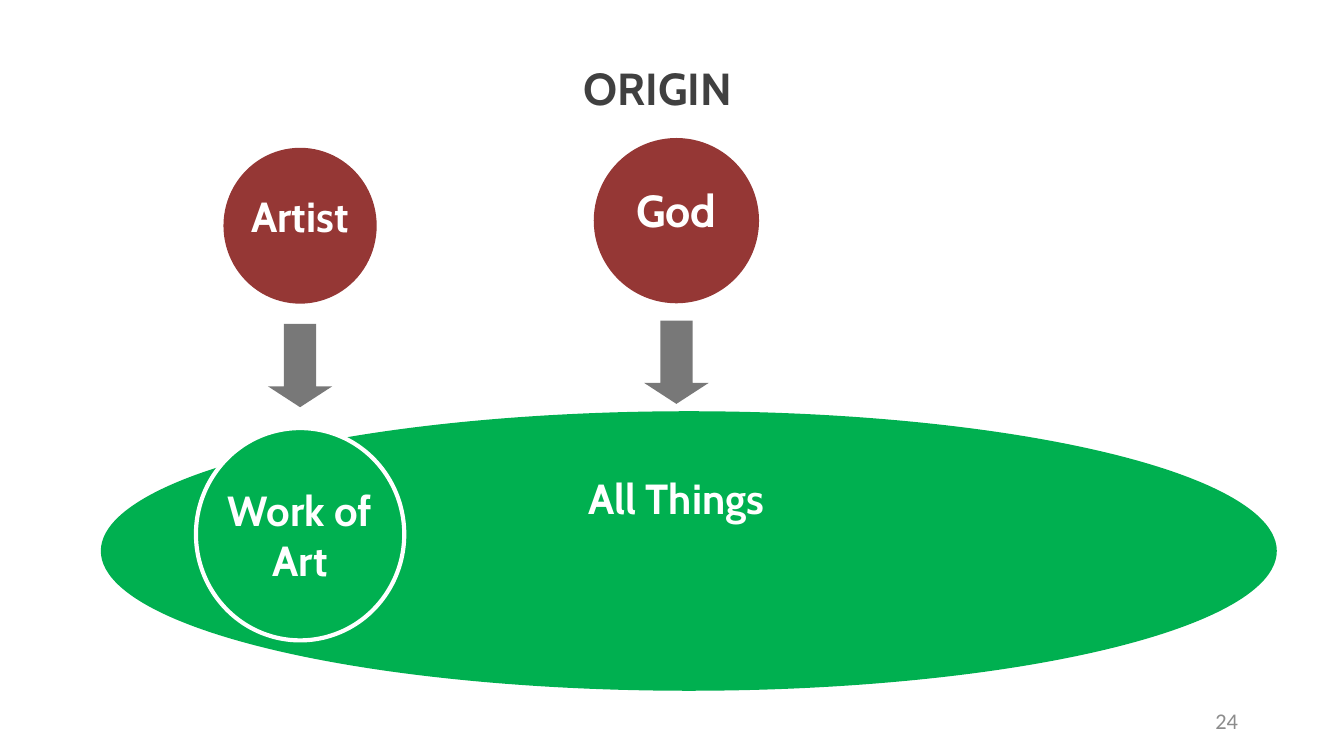
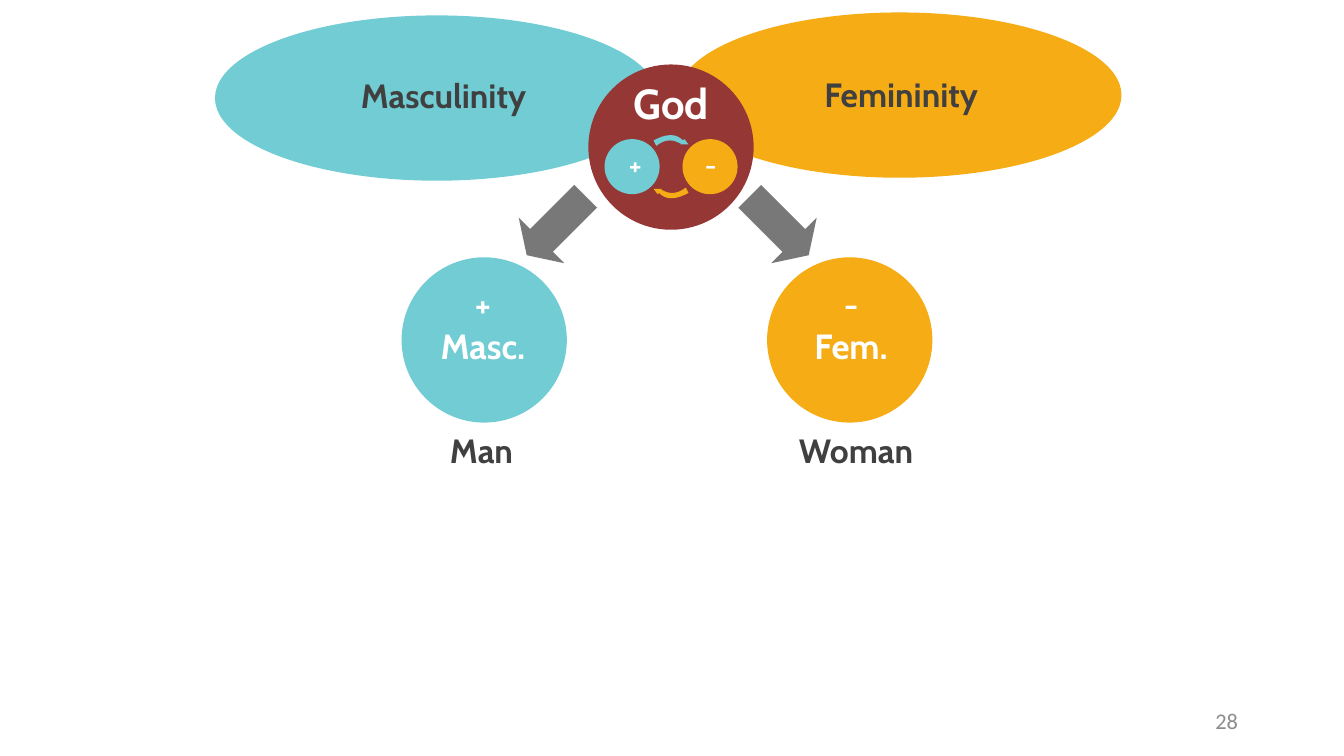
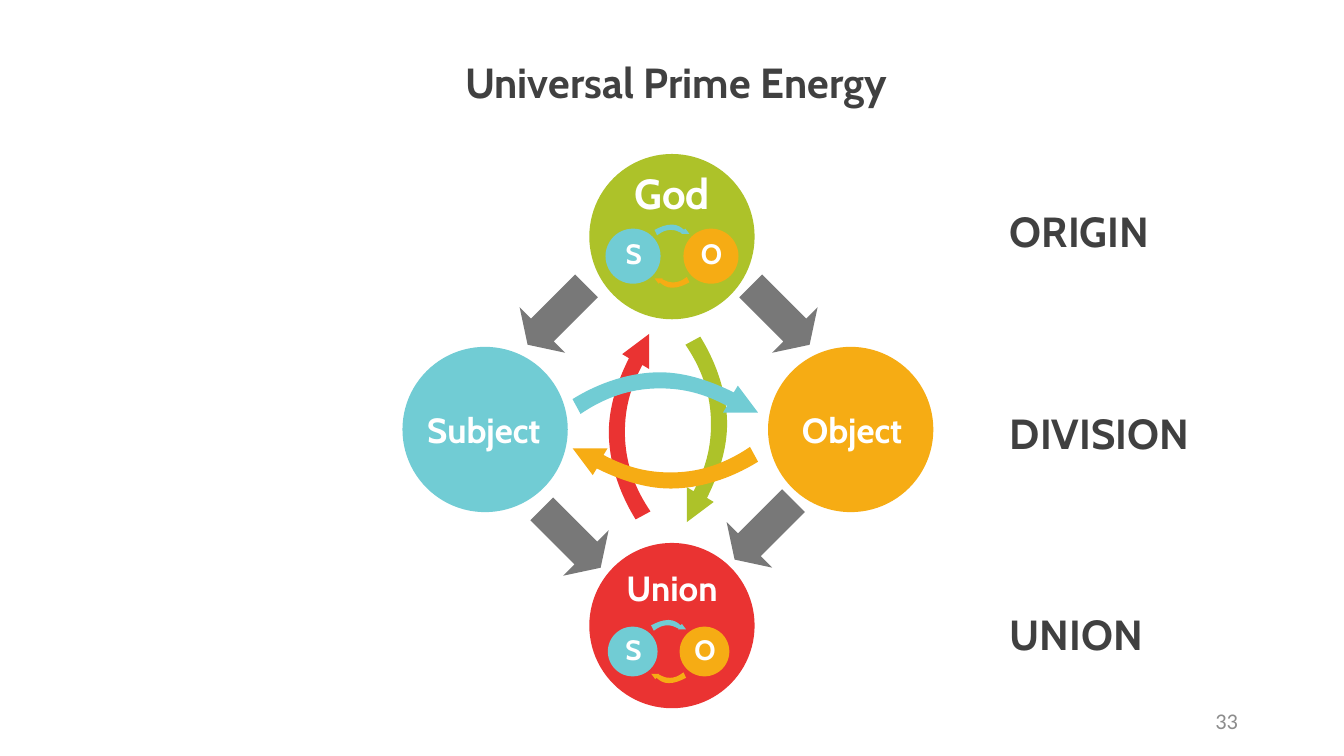
from dataclasses import dataclass

from lxml import etree
from pptx import Presentation
from pptx import util as u
from pptx.dml.color import RGBColor
from pptx.enum import shapes, text
from pptx.oxml.ns import qn


@dataclass(frozen=True)
class Theme:
    font: str = "Cabin"
    number_font: str = "Calibri"
    # colours
    ink: str = "404040"
    white: str = "FFFFFF"
    number: str = "8C8C8C"
    arrow: str = "787878"
    maroon: str = "953735"
    green: str = "00B050"
    teal: str = "71CCD4"
    amber: str = "F6AC14"
    lime: str = "ADC229"
    red: str = "EA3332"
    # type sizes in points
    title: float = 24
    large: float = 22.5
    medium: float = 18.75
    caption: float = 18
    small: float = 15
    tiny: float = 12


T = Theme()
WIDTH, HEIGHT = u.Inches(10), u.Inches(5.625)
CELL = WIDTH // 100  # square grid, 100 columns wide
BALL = 12.3          # diameter of the main circles
ALIGN = text.PP_ALIGN
TIGHT, NORMAL, WIDE = (0.3, 0.3), (0.7, 0.4), (1, 0.5)  # insets


def g(n):
    """Grid columns or rows to slide units."""
    return u.Emu(round(n * CELL))


def rgb(colour):
    return RGBColor.from_string(colour)


def apply(obj, **values):
    for name, value in values.items():
        setattr(obj, name, value)


def place(sp, left, top, width, height):
    apply(sp, left=g(left), top=g(top), width=g(width), height=g(height))


# ---- text ----
def write(tf, words, size, colour=T.ink, align=ALIGN.CENTER, insets=NORMAL,
          font=T.font, bold=True, gap=0, leading=1.0,
          anchor=text.MSO_ANCHOR.TOP,
          fit=text.MSO_AUTO_SIZE.SHAPE_TO_FIT_TEXT):
    tf.text = words
    x, y = map(g, insets)
    apply(tf, word_wrap=True, auto_size=fit, vertical_anchor=anchor,
          margin_left=x, margin_right=x, margin_top=y, margin_bottom=y)
    for i, p in enumerate(tf.paragraphs):
        apply(p, alignment=align, line_spacing=leading,
              space_before=u.Pt(gap if i else 0))
        for r in p.runs:
            apply(r.font, name=font, size=u.Pt(size), bold=bold)
            r.font.color.rgb = rgb(colour)


def label(s, cx, top, width, height, words, size, colour=T.white, **fmt):
    """Text box centred on the column cx."""
    sp = s.shapes.add_textbox(0, 0, 0, 0)
    place(sp, cx - width / 2, top, width, height)
    write(sp.text_frame, words, size, colour, **fmt)
    return sp


def heading(s, at, words, size, leading=1.0):
    place(s.shapes.title, *at)
    write(s.shapes.title.text_frame, words, size, align=ALIGN.LEFT,
          insets=WIDE, leading=leading)


def stages(s, at, words):
    body = s.placeholders[1]
    place(body, *at)
    write(body.text_frame, words, T.large, align=ALIGN.LEFT, insets=WIDE, gap=81)
    for p in body.text_frame.paragraphs:
        pr = p._p.get_or_add_pPr()
        pr.set("marL", "0")
        pr.set("indent", "0")
        etree.SubElement(pr, qn("a:buNone"))


def add_slide(prs, layout, number):
    s = prs.slides.add_slide(prs.slide_layouts.get_by_name(layout))
    label(s, 81.85, 52.1, 22.5, 3, str(number), T.tiny, T.number,
          align=ALIGN.RIGHT, insets=WIDE, font=T.number_font, bold=False,
          anchor=text.MSO_ANCHOR.MIDDLE, fit=text.MSO_AUTO_SIZE.NONE)
    return s


# ---- shapes ----
def paint(sp, colour, line=None):
    sp.shadow.inherit = False
    sp.fill.solid()
    sp.fill.fore_color.rgb = rgb(colour)
    if line:
        sp.line.color.rgb = rgb(line)
        sp.line.width = u.Pt(2.25)
    else:
        sp.line.fill.background()


def ellipse(s, cx, cy, width, height, colour, line=None):
    box = map(g, (cx - width / 2, cy - height / 2, width, height))
    paint(s.shapes.add_shape(shapes.MSO_SHAPE.OVAL, *box), colour, line)


def block_arrow(s, cx, cy, turn):
    w, h = 6.2, 4.8
    sp = s.shapes.add_shape(shapes.MSO_SHAPE.LEFT_ARROW,
                            *map(g, (cx - w / 2, cy - h / 2, w, h)))
    sp.adjustments[0], sp.adjustments[1] = 0.5, 0.325
    sp.rotation = turn
    paint(sp, T.arrow)


# Outlines: one point makes a straight segment, three make a cubic curve
BIG_BOW = (13.8, 3.1), [
    [(0, 2)],
    [(2.1, 0.7), (4.4, 0), (6.5, 0)], [(8.6, 0), (10.6, 0.8), (12, 1.5)],
    [(12.3, 1)], [(13.8, 3)], [(11.2, 3)], [(11.5, 2.5)],
    [(9.8, 1.6), (8.3, 1.2), (6.5, 1.2)], [(4.8, 1.2), (2.8, 1.6), (0.6, 3.1)],
]
SMALL_BOW = (2.6, 0.8), [
    [(0, 0.4)],
    [(0.4, 0.2), (0.8, 0), (1.3, 0)], [(1.7, 0), (2, 0.2), (2.2, 0.4)],
    [(2.3, 0.3)], [(2.6, 0.7)], [(2, 0.7)], [(2.05, 0.65)],
    [(1.7, 0.5), (1.6, 0.4), (1.2, 0.4)], [(0.9, 0.4), (0.6, 0.5), (0.2, 0.8)],
]


def bow_arrow(s, cx, cy, turn, colour, bow=BIG_BOW):
    """Curved arrow, bowed upwards and pointing right before its turn."""
    (w, h), segments = bow
    ends = [(g(cx - w / 2 + x), g(cy - h / 2 + y))
            for x, y in (seg[-1] for seg in segments)]
    fb = s.shapes.build_freeform(*ends[0])
    fb.add_line_segments(ends[1:], close=True)
    sp = fb.convert_to_shape()
    for line, seg in zip(list(sp._element.iter(qn("a:lnTo"))), segments[1:]):
        if len(seg) == 3:
            line.tag = qn("a:cubicBezTo")
            for i, (x, y) in enumerate(seg[:2]):
                pt = etree.Element(qn("a:pt"), x=str(g(x)), y=str(g(y)))
                line.insert(i, pt)
    sp.rotation = turn
    paint(sp, colour)


# ---- parts of the diagrams ----
def inner_pair(s, cx, cy, signs, size=4.1, reach=2.9):
    """Two small circles linked by two small bowed arrows."""
    for side, turn, colour, sign in ((-1, 0, T.teal, signs[0]),
                                     (1, 180, T.amber, signs[1])):
        x = cx + side * reach
        bow_arrow(s, cx, cy + side * 1.95, turn, colour, SMALL_BOW)
        ellipse(s, x, cy, size, size, colour)
        shift = 0.25 if sign == "+" else 0.05
        label(s, x + shift, cy - 1.75, 4, 3.1, sign, T.small, insets=TIGHT)


def division(s, cx, top, colour, signs, names, name_top, name_height):
    """God above, divided into a left and a right circle."""
    ellipse(s, cx, top + BALL / 2, BALL, BALL, colour)
    label(s, cx, top + 0.6, 8.1, 4.6, "God", T.large)
    inner_pair(s, cx, top + 7.6, signs)
    for x, shift, fill, name in ((cx - 13.9, -0.1, T.teal, names[0]),
                                 (cx + 13.3, 0.1, T.amber, names[1])):
        ellipse(s, x, top + 20.5, BALL, BALL, fill)
        label(s, x + shift, name_top, 12.1, name_height, name, T.medium,
              insets=TIGHT)
    for x, turn in ((cx - 8.55, 315), (cx + 8.05, 225)):
        block_arrow(s, x, top + 12, turn)


# ---- slides ----
def origin_slide(prs):
    s = add_slide(prs, "Title Only", 24)
    heading(s, (42.4, 3.8, 15.8, 5.3), "ORIGIN", T.title, leading=1.05)
    god, artist = 50.33, 22.33
    ellipse(s, god, 16.42, BALL, BALL, T.maroon)
    label(s, god, 13.2, 8.7, 4.8, "God", T.title)
    ellipse(s, 51.25, 41, 87.5, 20.8, T.green)
    paint(label(s, god, 34.75, 57.7, 4.6, "All Things", T.large), T.green)
    ellipse(s, artist, 16.8, 11.4, 11.6, T.maroon)
    label(s, artist, 13.8, 11.8, 4.6, "Artist", T.large)
    ellipse(s, artist, 39.75, 15.5, 15.8, T.green, T.white)
    label(s, artist, 35.65, 16.1, 8.3, "Work of Art", T.large)
    block_arrow(s, god, 26.95, 270)
    block_arrow(s, artist, 27.2, 270)


def polarity_slide(prs):
    s = add_slide(prs, "Blank", 28)
    for cx, cy, colour, x, top, word in (
            (32.5, 7.3, T.teal, 33, 5.15, "Masculinity"),
            (66.95, 7.08, T.amber, 67.05, 5.1, "Femininity")):
        ellipse(s, cx, cy, 33, BALL, colour)
        label(s, x, top, 25.9, 3.8, word, T.caption, T.ink)
    division(s, 49.93, 4.8, T.maroon, "+-", ("+\nMasc.", "-\vFem."), 20.72, 7)
    for cx, word in ((35.83, "Man"), (63.7, "Woman")):
        label(s, cx, 31.6, 11.6, 3.8, word, T.caption, T.ink)


def energy_slide(prs):
    s = add_slide(prs, "Title and Content", 33)
    heading(s, (33.6, 3.7, 38.7, 4.8), "Universal Prime Energy", T.large)
    stages(s, (74.13, 14.8, 18.1, 35.1), "ORIGIN\nDIVISION\nUNION")
    centre = 50
    division(s, centre, 11.46, T.lime, "SO", ("Subject", "Object"), 30.1, 3.8)
    # circulation in the middle
    for cx, cy, turn, colour in ((46.85, 31.75, 270, T.red),
                                 (52.55, 31.95, 90, T.lime),
                                 (49.5, 29.25, 0, T.teal),
                                 (49.5, 34.8, 180, T.amber)):
        bow_arrow(s, cx, cy, turn, colour)
    # union below
    ellipse(s, centre, 46.55, BALL, BALL, T.red)
    label(s, centre, 41.75, 10.2, 3.9, "Union", T.medium)
    inner_pair(s, 49.75, 48.48, "SO", size=3.7, reach=2.67)
    block_arrow(s, 42.5, 40.05, 225)
    block_arrow(s, 56.85, 39.45, 315)


def main():
    prs = Presentation()
    apply(prs, slide_width=WIDTH, slide_height=HEIGHT)
    for build in (origin_slide, polarity_slide, energy_slide):
        build(prs)
    prs.save("out.pptx")


if __name__ == "__main__":
    main()
